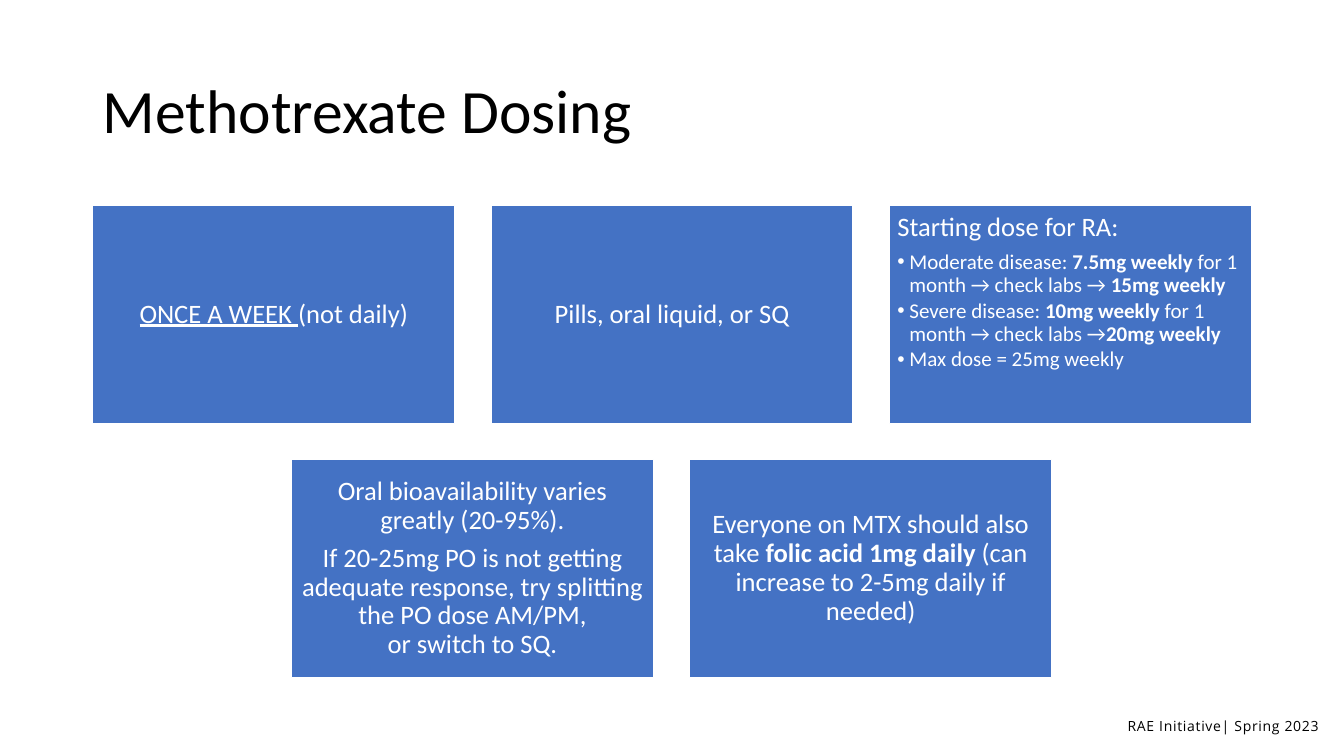
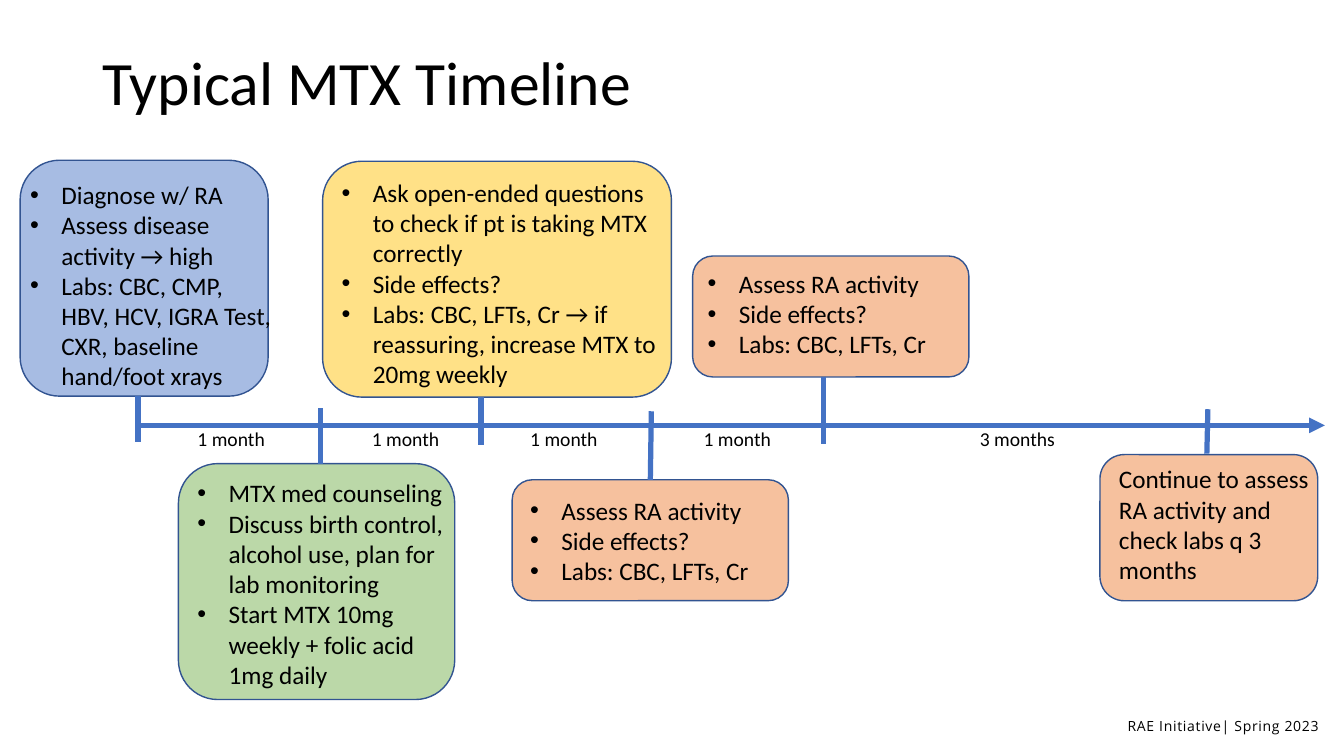
import pptx
import pptx.util
import pptx.dml.color
import pptx.enum.shapes
import pptx.enum.text
import pptx.oxml
import pptx.oxml.ns
from dataclasses import dataclass


@dataclass(frozen=True)
class Theme:
    font: str = "Calibri"
    footer_font: str = "Open Sans"
    black: str = "000000"
    white: str = "FFFFFF"
    blue: str = "4472C4"
    outline: str = "325491"
    orange: str = "ED7D31"
    yellow: str = "FFC000"
    green: str = "70AD47"
    tint: int = 47000
    title: int = 44
    card: int = 19
    card_bullet: int = 15
    note: int = 18
    interval: int = 14
    footer: int = 10


T = Theme()
PX = 9144
W, H = 1333, 750
Pt = pptx.util.Pt
RGB = pptx.dml.color.RGBColor.from_string
SHAPE = pptx.enum.shapes.MSO_SHAPE
ANCHOR = pptx.enum.text.MSO_ANCHOR
ALIGN = pptx.enum.text.PP_ALIGN
NS = pptx.oxml.ns.nsdecls("a")


def write(tf, paragraphs, size, color=T.black, font=T.font, align=ALIGN.LEFT,
          spacing=None, after=0, indent=0, tracking=0):
    for runs in paragraphs:
        p = tf.paragraphs[0] if not tf.paragraphs[0].runs else tf.add_paragraph()
        p.alignment = align
        p.line_spacing = spacing
        p.space_after = Pt(after)
        if indent:
            pPr = p._p.get_or_add_pPr()
            pPr.set("marL", str(indent * PX))
            pPr.set("indent", str(-indent * PX))
            pPr.append(pptx.oxml.parse_xml(f'<a:buFont {NS} typeface="Arial"/>'))
            pPr.append(pptx.oxml.parse_xml(f'<a:buChar {NS} char="•"/>'))
        for text, style in runs:
            if text == "\n":
                p.add_line_break()
                continue
            r = p.add_run()
            r.text = text
            r.font.name = font
            r.font.size = Pt(size)
            r.font.color.rgb = RGB(color)
            if style == "bold":
                r.font.bold = True
            if style == "underline":
                r.font.underline = True
            if tracking:
                r._r.get_or_add_rPr().set("spc", str(tracking))


def text_box(s, x, y, w, h):
    tf = s.shapes.add_textbox(x * PX, y * PX, w * PX, h * PX).text_frame
    tf.word_wrap = True
    return tf


prs = pptx.Presentation()
prs.slide_width = W * PX
prs.slide_height = H * PX

slides = []
for title, top in (("Methotrexate Dosing", 40), ("Typical MTX Timeline", 12)):
    s = prs.slides.add_slide(prs.slide_layouts[6])
    tf = text_box(s, 92, top, 1150, 145)
    tf.vertical_anchor = ANCHOR.MIDDLE
    write(tf, [[(title, "")]], T.title, spacing=0.9)
    tf = text_box(s, 1059, 712, 249, 17)
    tf.margin_left = tf.margin_right = tf.margin_top = tf.margin_bottom = 0
    write(tf, [[("RAE Initiative| Spring 2023", "")]], T.footer, font=T.footer_font,
          align=ALIGN.RIGHT, spacing=Pt(12), tracking=50)
    slides.append(s)
dosing, timeline = slides

CARD_W, CARD_H, GAP, CARDS_TOP = 359, 216, 36, 204
starting_dose = [[("Starting dose for RA:", "")]]
dose_steps = [
    [("Moderate disease: ", ""), ("7.5mg weekly ", "bold"),
     ("for 1 month → check labs → ", ""), ("15mg weekly", "bold")],
    [("Severe disease: ", ""), ("10mg weekly ", "bold"),
     ("for 1 month → check labs →", ""), ("20mg weekly", "bold")],
    [("Max dose = 25mg weekly", "")],
]
card_rows = [
    [
        [[("ONCE A WEEK ", "underline"), ("(not daily)", "")]],
        [[("Pills, oral liquid, or SQ", "")]],
        starting_dose,
    ],
    [
        [[("Oral bioavailability varies greatly (20-95%).", "")],
         [("If 20-25mg PO is not getting adequate response, try splitting the PO dose AM/PM,", ""),
          ("\n", ""), ("or switch to SQ.", "")]],
        [[("Everyone on MTX should also take ", ""), ("folic acid 1mg daily ", "bold"),
          ("(can increase to 2-5mg daily if needed)", "")]],
    ],
]
for row, cards in enumerate(card_rows):
    left = (W - len(cards) * (CARD_W + GAP) + GAP) // 2
    for col, paragraphs in enumerate(cards):
        x = left + col * (CARD_W + GAP)
        y = CARDS_TOP + row * (CARD_H + GAP)
        sp = dosing.shapes.add_shape(SHAPE.RECTANGLE, x * PX, y * PX, CARD_W * PX, CARD_H * PX)
        sp.shadow.inherit = False
        sp.fill.solid()
        sp.fill.fore_color.rgb = RGB(T.blue)
        sp.line.color.rgb = RGB(T.white)
        sp.line.width = Pt(1)
        tf = sp.text_frame
        tf.word_wrap = True
        tf.margin_left = tf.margin_right = tf.margin_top = tf.margin_bottom = 8 * PX
        listed = paragraphs is starting_dose
        tf.vertical_anchor = ANCHOR.TOP if listed else ANCHOR.MIDDLE
        write(tf, paragraphs, T.card, T.white, spacing=0.9, after=6.65,
              align=ALIGN.LEFT if listed else ALIGN.CENTER)
        if listed:
            write(tf, dose_steps, T.card_bullet, T.white, spacing=0.9, after=2.25, indent=12)

follow_up = ["Assess RA activity", "Side effects?", "Labs: CBC, LFTs, Cr"]
notes = [
    (T.blue, (20, 159, 246, 234), (20, 173, 259, 252), 31,
     ["Diagnose w/ RA", "Assess disease activity → high",
      "Labs: CBC, CMP, HBV, HCV, IGRA Test, CXR, baseline hand/foot xrays"]),
    (T.green, (177, 460, 274, 234), (186, 469, 274, 222), 31,
     ["MTX med counseling", "Discuss birth control, alcohol use, plan for lab monitoring",
      "Start MTX 10mg weekly + folic acid 1mg daily"]),
    (T.yellow, (320, 160, 346, 234), (329, 171, 338, 222), 31,
     ["Ask open-ended questions to check if pt is taking MTX correctly", "Side effects?",
      "Labs: CBC, LFTs, Cr → if reassuring, increase MTX to 20mg weekly"]),
    (T.orange, (508, 476, 274, 120), (516, 486, 240, 101), 31, follow_up),
    (T.orange, (687, 254, 274, 120), (692, 261, 338, 101), 31, follow_up),
    (T.orange, (1091, 451, 216, 145), (1100, 455, 214, 131), 0,
     ["Continue to assess RA activity and check labs q 3 months"]),
]
for color, box, text_area, indent, lines in notes:
    sp = timeline.shapes.add_shape(SHAPE.ROUNDED_RECTANGLE, *(v * PX for v in box))
    sp.shadow.inherit = False
    sp.fill.solid()
    sp.fill.fore_color.rgb = RGB(color)
    clr = sp._element.spPr.find(pptx.oxml.ns.qn("a:solidFill"))[0]
    clr.append(pptx.oxml.parse_xml(f'<a:alpha {NS} val="{T.tint}"/>'))
    sp.line.color.rgb = RGB(T.outline)
    sp.line.width = Pt(1)
    write(text_box(timeline, *text_area), [[(line, "")] for line in lines], T.note, indent=indent)

AXIS_Y = 422
axis = (137, AXIS_Y, 1314, AXIS_Y)
ticks = [(137, 393, 137, 439), (318, 405, 318, 460), (477, 394, 477, 441),
         (646, 408, 645, 476), (817, 374, 817, 440), (1198, 406, 1197, 450)]
for ends in [axis] + ticks:
    cn = timeline.shapes.add_connector(pptx.enum.shapes.MSO_CONNECTOR.STRAIGHT,
                                       *(v * PX for v in ends))
    cn.line.color.rgb = RGB(T.blue)
    cn.line.width = Pt(3.75)
    if ends == axis:
        cn.line._get_or_add_ln().append(pptx.oxml.parse_xml(f'<a:tailEnd {NS} type="triangle"/>'))
    cn._element.spPr.append(pptx.oxml.parse_xml(f"<a:effectLst {NS}/>"))

for x, label in ((186, "1 month"), (359, "1 month"), (516, "1 month"),
                 (688, "1 month"), (962, "3 months")):
    write(text_box(timeline, x, AXIS_Y - 3, 117, 34), [[(label, "")]], T.interval)

prs.save("out.pptx")
